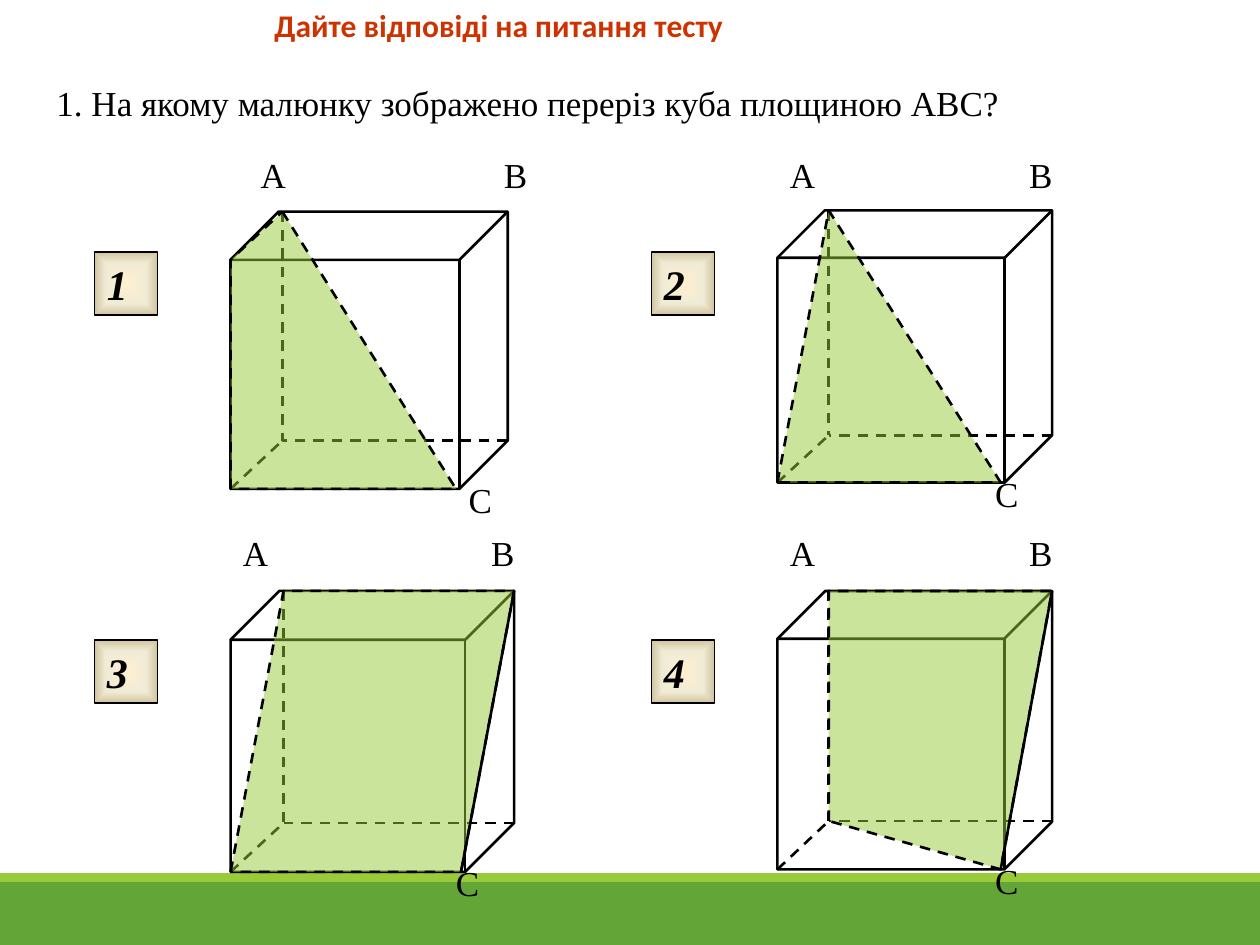
import pptx
import pptx.dml.color
import pptx.enum.dml
import pptx.enum.shapes
import pptx.enum.text
import pptx.oxml
import pptx.oxml.ns
import pptx.util
from dataclasses import dataclass

Inches = pptx.util.Inches
Pt = pptx.util.Pt
SHAPES = pptx.enum.shapes.MSO_SHAPE


@dataclass(frozen=True)
class Theme:
    black: str = "000000"
    title: str = "CC3300"
    band: str = "63A537"
    accent: str = "99CB38"
    button_stops: tuple = ((0, "FFEFD1"), (65, "F0EBD5"), (100, "D1C39F"))
    title_font: str = "Calibri"
    body_font: str = "Times New Roman"
    title_size: int = 18
    body_size: int = 20
    button_size: int = 24
    edge: float = 1.5
    button_edge: float = 0.75
    section_opacity: int = 50


THEME = Theme()

TITLE = "Дайте відповіді на питання тесту"
QUESTION = "1. На якому малюнку зображено переріз куба площиною ABC?"
BANDS = [(7, 0.5, THEME.band), (6.93, 0.07, THEME.accent)]

# Section corners: A back top left, B back top right, C front bottom right,
# D front bottom left, E front top left, H hidden back bottom left.
OPTIONS = [
    {"number": "1", "button": (0.75, 2), "cube": (1.83, 1.68, 2.2, 2.2), "section": "ACDE",
     "labels": {"A": (1.97, 1.17), "B": (3.9, 1.17), "C": (3.62, 3.75)}},
    {"number": "2", "button": (5.17, 2), "cube": (6.17, 1.67, 2.18, 2.16), "section": "DAC",
     "labels": {"A": (6.17, 1.17), "B": (8.07, 1.17), "C": (7.8, 3.7)}},
    {"number": "3", "button": (0.75, 5.08), "cube": (1.83, 4.69, 2.25, 2.23), "section": "DABC",
     "labels": {"A": (1.83, 4.17), "B": (3.8, 4.17), "C": (3.52, 6.79)}},
    {"number": "4", "button": (5.17, 5.08), "cube": (6.17, 4.69, 2.18, 2.21), "section": "HABC",
     "labels": {"A": (6.17, 4.17), "B": (8.07, 4.17), "C": (7.8, 6.77)}},
]
CUBE_DEPTH = 0.174
INSET_RATIO = 0.187
LABEL_SIZE = (0.69, 0.43)
BUTTON_SIDE = 0.5


def rgb(color):
    return pptx.dml.color.RGBColor.from_string(color)


def set_line(line, width, dashed=False):
    line.color.rgb = rgb(THEME.black)
    line.width = Pt(width)
    if dashed:
        line.dash_style = pptx.enum.dml.MSO_LINE.DASH


def write(shape, text, font_name, size, color=THEME.black, bold=False, italic=False):
    paragraph = shape.text_frame.paragraphs[0]
    paragraph.text = text
    paragraph.alignment = pptx.enum.text.PP_ALIGN.LEFT
    font = paragraph.runs[0].font
    font.name, font.size, font.bold, font.italic = font_name, Pt(size), bold, italic
    font.color.rgb = rgb(color)


def add_text(shapes, box, text, *style, **options):
    shape = shapes.add_textbox(*map(Inches, box))
    shape.text_frame.word_wrap = True
    shape.text_frame.auto_size = pptx.enum.text.MSO_AUTO_SIZE.SHAPE_TO_FIT_TEXT
    write(shape, text, *style, **options)


def add_edge(shapes, start, end, dashed):
    connector = shapes.add_connector(
        pptx.enum.shapes.MSO_CONNECTOR.STRAIGHT, *map(Inches, start + end))
    set_line(connector.line, THEME.edge, dashed)
    properties = connector._element.spPr
    properties.append(properties.makeelement(pptx.oxml.ns.qn("a:effectLst"), {}))


def add_section(shapes, points):
    start, *others = [tuple(map(Inches, point)) for point in points]
    builder = shapes.build_freeform(*start)
    builder.add_line_segments(others, close=True)
    section = builder.convert_to_shape()
    section.shadow.inherit = False
    section.fill.solid()
    section.fill.fore_color.rgb = rgb(THEME.accent)
    color = section._element.spPr.find(".//" + pptx.oxml.ns.qn("a:srgbClr"))
    alpha = color.makeelement(
        pptx.oxml.ns.qn("a:alpha"), {"val": str(THEME.section_opacity * 1000)})
    color.append(alpha)
    set_line(section.line, THEME.edge, dashed=True)


def cube_corners(left, top, width, height):
    inset, drop = INSET_RATIO * width, CUBE_DEPTH * height
    right, bottom = left + width, top + height
    return {
        "A": (left + inset, top),
        "B": (right, top),
        "C": (right - inset, bottom),
        "D": (left, bottom),
        "E": (left, top + drop),
        "H": (left + inset, bottom - drop),
        "K": (right, bottom - drop),
    }


def add_cube(slide, option):
    """Group a cube with its hidden edges, its section and its corner letters."""
    shapes = slide.shapes.add_group_shape().shapes
    cube = shapes.add_shape(SHAPES.CUBE, *map(Inches, option["cube"]))
    cube.adjustments[0] = CUBE_DEPTH
    cube.shadow.inherit = False
    cube.fill.background()
    set_line(cube.line, THEME.edge)

    corners = cube_corners(*option["cube"])
    for start in "KDA":
        add_edge(shapes, corners[start], corners["H"], dashed=True)
    add_section(shapes, [corners[name] for name in option["section"]])
    if "BC" in option["section"]:
        add_edge(shapes, corners["B"], corners["C"], dashed=False)
    for letter, position in option["labels"].items():
        add_text(shapes, position + LABEL_SIZE, letter, THEME.body_font, THEME.body_size)


def fill_from_center(shape, stops):
    """Give the shape a rectangular gradient that spreads from its middle."""
    stop_xml = "".join(
        f'<a:gs pos="{position * 1000}"><a:srgbClr val="{color}"/></a:gs>'
        for position, color in stops)
    gradient = pptx.oxml.parse_xml(
        f'<a:gradFill {pptx.oxml.ns.nsdecls("a")}><a:gsLst>{stop_xml}</a:gsLst>'
        '<a:path path="rect"><a:fillToRect l="50000" t="50000" r="50000" b="50000"/>'
        '</a:path></a:gradFill>')
    shape.fill.background()
    properties = shape._element.spPr
    properties.replace(properties.find(pptx.oxml.ns.qn("a:noFill")), gradient)


def add_button(slide, option):
    button = slide.shapes.add_shape(
        SHAPES.ACTION_BUTTON_CUSTOM, *map(Inches, option["button"] + (BUTTON_SIDE, BUTTON_SIDE)))
    button.shadow.inherit = False
    fill_from_center(button, THEME.button_stops)
    set_line(button.line, THEME.button_edge)
    button.text_frame.word_wrap = False
    button.text_frame.vertical_anchor = pptx.enum.text.MSO_ANCHOR.MIDDLE
    write(button, option["number"], THEME.body_font, THEME.button_size, bold=True, italic=True)


def main():
    presentation = pptx.Presentation()
    presentation.slide_width, presentation.slide_height = Inches(10), Inches(7.5)
    slide = presentation.slides.add_slide(presentation.slide_layouts[6])

    for top, height, color in BANDS:
        band = slide.shapes.add_shape(SHAPES.RECTANGLE, *map(Inches, (0, top, 10, height)))
        band.shadow.inherit = False
        band.fill.solid()
        band.fill.fore_color.rgb = rgb(color)
        band.line.fill.background()

    add_text(slide.shapes, (2.08, 0, 6, 0.5), TITLE,
             THEME.title_font, THEME.title_size, THEME.title, bold=True)
    add_text(slide.shapes, (0.35, 0.6, 9.33, 0.44), QUESTION,
             THEME.body_font, THEME.body_size)
    for option in OPTIONS:
        add_cube(slide, option)
    for option in OPTIONS:
        add_button(slide, option)
    presentation.save("out.pptx")


if __name__ == "__main__":
    main()
